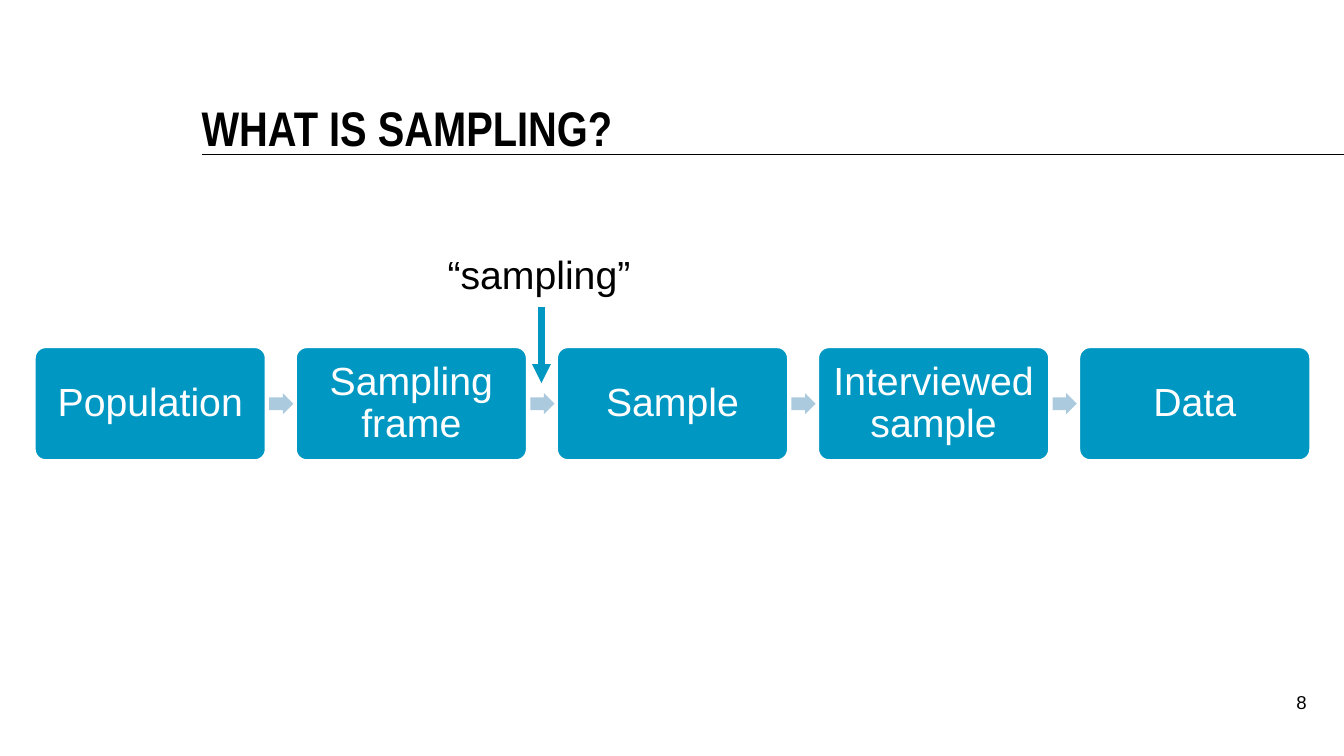
from dataclasses import dataclass

from lxml.etree import SubElement
from pptx import Presentation
from pptx.dml.color import RGBColor
from pptx.enum.shapes import MSO_CONNECTOR, MSO_SHAPE
from pptx.enum.text import MSO_ANCHOR, MSO_AUTO_SIZE, PP_ALIGN
from pptx.oxml.ns import qn
from pptx.util import Inches, Pt

TITLE = "WHAT IS SAMPLING?"
LABEL = "“sampling”"
PAGE_NUMBER = "8"
STEPS = ["Population", "Sampling frame", "Sample", "Interviewed sample", "Data"]


@dataclass(frozen=True)
class Theme:
    black: RGBColor = RGBColor(0x00, 0x00, 0x00)
    white: RGBColor = RGBColor(0xFF, 0xFF, 0xFF)
    blue: RGBColor = RGBColor(0x00, 0x98, 0xC3)
    pale_blue: RGBColor = RGBColor(0xAB, 0xCA, 0xDE)
    title_font: str = "Arial Narrow"
    body_font: str = "Arial"
    title_size: float = 34.7
    body_size: float = 28
    number_size: float = 13.3


THEME = Theme()

# Process row, in inches
STEP_LEFT, STEP_TOP, STEP_WIDTH, STEP_HEIGHT = 0.34, 3.44, 2.3, 1.13
STEP_PITCH = 2.59
ARROW_GAP, ARROW_WIDTH, ARROW_HEIGHT = 0.03, 0.24, 0.21
POINTER_X = 5.37


def place(shape, left, top, width, height):
    shape.left, shape.top = Inches(left), Inches(top)
    shape.width, shape.height = Inches(width), Inches(height)


def write(shape, text, size, color, insets, align, spacing, font=THEME.body_font,
          bold=False, anchor=MSO_ANCHOR.TOP):
    """Fill a shape with one paragraph; insets are left, top, right, bottom in inches."""
    frame = shape.text_frame
    left, top, right, bottom = map(Inches, insets)
    frame_format = {
        "word_wrap": True, "auto_size": MSO_AUTO_SIZE.NONE, "vertical_anchor": anchor,
        "margin_left": left, "margin_top": top,
        "margin_right": right, "margin_bottom": bottom,
    }
    for name, value in frame_format.items():
        setattr(frame, name, value)
    para = frame.paragraphs[0]
    para.alignment, para.line_spacing, para.space_before = align, spacing, Pt(0)
    span = para.add_run()
    span.text = text
    for name, value in {"name": font, "size": Pt(size), "bold": bold}.items():
        setattr(span.font, name, value)
    span.font.color.rgb = color


def remove_bullet(para):
    properties = para._p.get_or_add_pPr()
    properties.set("marL", "0")
    properties.set("indent", "0")
    SubElement(properties, qn("a:buNone"))


def add_block(page, kind, left, top, width, height, color):
    block = page.shapes.add_shape(
        kind, Inches(left), Inches(top), Inches(width), Inches(height))
    block.shadow.inherit = False
    block.fill.solid()
    block.fill.fore_color.rgb = color
    block.line.fill.background()
    return block


def add_line(page, start, end, color, weight, arrowhead=False):
    line = page.shapes.add_connector(
        MSO_CONNECTOR.STRAIGHT, *map(Inches, start), *map(Inches, end))
    line.line.color.rgb = color
    line.line.width = Pt(weight)
    if arrowhead:
        SubElement(line.line._get_or_add_ln(), qn("a:tailEnd"), type="triangle")
    SubElement(line._element.spPr, qn("a:effectLst"))


def add_process(page):
    for index, step in enumerate(STEPS):
        left = STEP_LEFT + index * STEP_PITCH
        box = add_block(page, MSO_SHAPE.ROUNDED_RECTANGLE, left, STEP_TOP,
                        STEP_WIDTH, STEP_HEIGHT, THEME.blue)
        box.adjustments[0] = 0.1
        box.line.color.rgb = THEME.white
        box.line.width = Pt(2)
        write(box, step, THEME.body_size, THEME.white, (0.11,) * 4,
              PP_ALIGN.CENTER, 0.9, anchor=MSO_ANCHOR.MIDDLE)
        if index < len(STEPS) - 1:
            arrow = add_block(page, MSO_SHAPE.RIGHT_ARROW,
                              left + STEP_WIDTH + ARROW_GAP,
                              STEP_TOP + (STEP_HEIGHT - ARROW_HEIGHT) / 2,
                              ARROW_WIDTH, ARROW_HEIGHT, THEME.pale_blue)
            arrow.adjustments[0] = 0.6


def main():
    deck = Presentation()
    deck.slide_width, deck.slide_height = Inches(13.33), Inches(7.5)
    page = deck.slides.add_slide(deck.slide_layouts[1])

    add_line(page, (2, 1.53), (13.33, 1.53), THEME.black, 1)
    title, label = page.shapes.title, page.placeholders[1]
    place(title, 2, 0.75, 11, 0.8)
    write(title, TITLE, THEME.title_size, THEME.black, (0, 0, 0, 0), PP_ALIGN.LEFT,
          Pt(33.3), font=THEME.title_font, bold=True, anchor=MSO_ANCHOR.BOTTOM)

    place(label, 4.25, 2.44, 2.29, 0.52)
    remove_bullet(label.text_frame.paragraphs[0])
    write(label, LABEL, THEME.body_size, THEME.black, (0, 0.05, 0.1, 0.05),
          PP_ALIGN.CENTER, Pt(33.3))

    number = page.shapes.add_textbox(
        Inches(12.41), Inches(6.75), Inches(0.55), Inches(0.52))
    write(number, PAGE_NUMBER, THEME.number_size, THEME.black, (0.1, 0.05, 0, 0.05),
          PP_ALIGN.RIGHT, Pt(20))

    add_process(page)
    add_line(page, (POINTER_X, 3.05), (POINTER_X, 3.8), THEME.blue, 4.5, arrowhead=True)
    deck.save("out.pptx")


if __name__ == "__main__":
    main()
